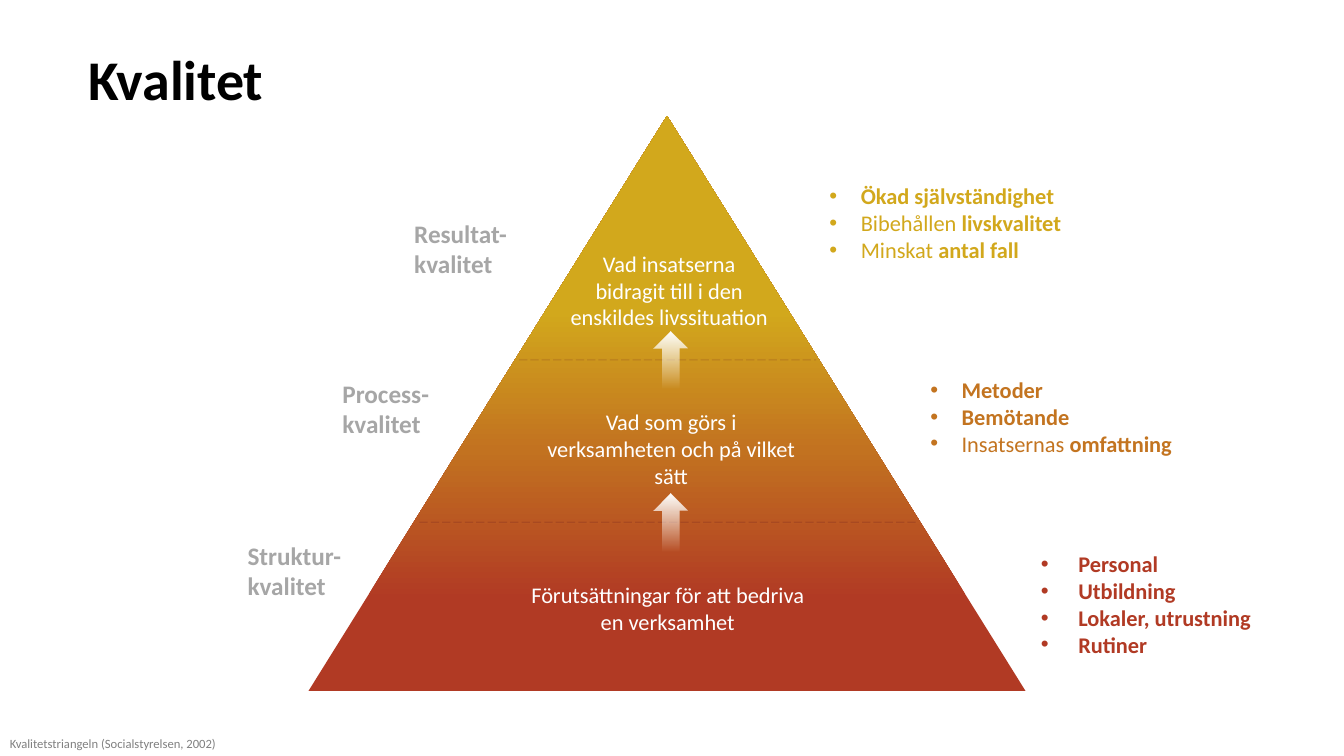
from lxml.etree import SubElement
from pptx import Presentation
from pptx.dml.color import RGBColor
from pptx.enum.dml import MSO_LINE_DASH_STYLE as Dash
from pptx.enum.shapes import MSO_CONNECTOR as Connector, MSO_SHAPE as Shape
from pptx.enum.text import MSO_ANCHOR as Anchor, MSO_AUTO_SIZE as AutoSize, PP_ALIGN as Align
from pptx.oxml.ns import qn
from pptx.util import Cm, Pt

BLACK = RGBColor(0x00, 0x00, 0x00)
WHITE = RGBColor(0xFF, 0xFF, 0xFF)
LABEL_GRAY = RGBColor(0xA6, 0xA6, 0xA6)
SOURCE_GRAY = RGBColor(0x80, 0x80, 0x80)
GOLD = RGBColor(0xD2, 0xA8, 0x1C)
ORANGE = RGBColor(0xC3, 0x74, 0x20)
MIDDLE_ORANGE = RGBColor(0xC2, 0x72, 0x20)
RED = RGBColor(0xB1, 0x3A, 0x24)
DIVIDER = RGBColor(0x60, 0x14, 0x21)

COMPARISON_LAYOUT = 4

# Each level: label, question lines and list, with boxes in cm
LEVELS = [
    dict(label="Resultat- kvalitet", label_box=(10.19, 5.38, 3.23, 1.8),
         lines=["Vad insatserna", "bidragit till i den enskildes livssituation"],
         lines_box=(13.97, 6.17, 5.79, 2.31),
         items=[[("Ökad självständighet", True)],
                [("Bibehållen", False), (" livskvalitet", True)],
                [("Minskat ", False), ("antal fall", True)]],
         items_box=(19.38, 4.47, 11.23, 2.31), color=GOLD, indent=(2.06, 0.79)),
    dict(label="Process- kvalitet", label_box=(8.38, 9.4, 2.9, 1.8),
         lines=["Vad som görs i", "verksamheten och på vilket sätt"],
         lines_box=(13.08, 10.16, 7.67, 2.31),
         items=[[("Metoder", True)], [("Bemötande", True)],
                [("Insatsernas ", False), ("omfattning", True)]],
         items_box=(21.92, 9.35, 10.49, 2.31), color=ORANGE, indent=(2.06, 0.79)),
    dict(label="Struktur- kvalitet", label_box=(5.99, 13.49, 3.15, 1.8),
         lines=["Förutsättningar för att bedriva", "en verksamhet"],
         lines_box=(11.46, 14.53, 10.74, 1.63),
         items=[[("Personal", True)], [("Utbildning", True)],
                [("Lokaler, utrustning", True)], [("Rutiner", True)]],
         items_box=(24.71, 13.74, 9.1, 3), color=RED, indent=(2.21, 0.94)),
]


def add_text(paragraph, text, size=16, color=BLACK, bold=False, font="Calibri"):
    run = paragraph.add_run()
    run.text = text
    run.font.name = font
    run.font.size = Pt(size)
    run.font.bold = bold
    run.font.color.rgb = color


def set_alpha(color_element, percent):
    SubElement(color_element, qn("a:alpha"), val=str(percent * 1000))


class SlideBuilder:
    def __init__(self, slide):
        self.slide = slide

    def place(self, shape, box):
        shape.left, shape.top, shape.width, shape.height = map(Cm, box)

    def title(self, text, box):
        title = self.slide.shapes.title
        self.place(title, box)
        title.text_frame.vertical_anchor = Anchor.TOP
        paragraph = title.text_frame.paragraphs[0]
        paragraph.alignment = Align.LEFT
        paragraph.line_spacing = 0.95
        add_text(paragraph, text, size=40, bold=True)

    def text_box(self, lines, box, align=Align.LEFT, **style):
        frame = self.slide.shapes.add_textbox(*map(Cm, box)).text_frame
        frame.word_wrap = True
        frame.auto_size = AutoSize.SHAPE_TO_FIT_TEXT
        for number, line in enumerate(lines):
            paragraph = frame.add_paragraph() if number else frame.paragraphs[0]
            paragraph.alignment = align
            add_text(paragraph, line, **style)

    def bullet_list(self, placeholder, items, box, color, indent):
        self.place(placeholder, box)
        frame = placeholder.text_frame
        frame.word_wrap = True
        frame.auto_size = AutoSize.SHAPE_TO_FIT_TEXT
        frame.vertical_anchor = Anchor.TOP
        margin, hanging = map(Cm, indent)
        for number, pieces in enumerate(items):
            paragraph = frame.add_paragraph() if number else frame.paragraphs[0]
            paragraph.level = 1
            paragraph.alignment = Align.LEFT
            paragraph.line_spacing = 1.0
            paragraph.space_before = Pt(0)
            properties = paragraph._p.get_or_add_pPr()
            properties.set("marL", str(margin))
            properties.set("indent", str(-hanging))
            SubElement(properties, qn("a:buFont"), typeface="Arial")
            SubElement(properties, qn("a:buChar"), char="•")
            for text, bold in pieces:
                add_text(paragraph, text, color=color, bold=bold)

    def gradient_shape(self, kind, box, stops, angle, rotation=0):
        """Stops are (position, colour, opacity), both numbers in percent."""
        shape = self.slide.shapes.add_shape(kind, *map(Cm, box))
        shape.rotation = rotation
        shape.shadow.inherit = False
        shape.line.fill.background()
        shape.fill.gradient()
        gradient = shape._element.spPr.find(qn("a:gradFill"))
        stop_list = gradient.find(qn("a:gsLst"))
        for old_stop in list(stop_list):
            stop_list.remove(old_stop)
        for position, color, opacity in stops:
            stop = SubElement(stop_list, qn("a:gs"), pos=str(position * 1000))
            color_element = SubElement(stop, qn("a:srgbClr"), val=str(color))
            if opacity < 100:
                set_alpha(color_element, opacity)
        gradient.find(qn("a:lin")).set("ang", str(angle * 60000))

    def divider(self, left, right, y):
        line = self.slide.shapes.add_connector(
            Connector.STRAIGHT, Cm(left), Cm(y), Cm(right), Cm(y))
        line.line.color.rgb = DIVIDER
        line.line.width = Pt(0.75)
        line.line.dash_style = Dash.LONG_DASH
        properties = line._element.spPr
        set_alpha(next(properties.iter(qn("a:srgbClr"))), 20)
        SubElement(properties, qn("a:effectLst"))


def main():
    presentation = Presentation()
    presentation.slide_width, presentation.slide_height = Cm(33.87), Cm(19.05)
    slide = presentation.slides.add_slide(presentation.slide_layouts[COMPARISON_LAYOUT])
    builder = SlideBuilder(slide)
    builder.title("Kvalitet", (1.98, 1.12, 21.56, 2.36))

    # Pyramid with its dividers
    builder.gradient_shape(Shape.ISOSCELES_TRIANGLE, (7.77, 2.92, 18.08, 14.5),
                           [(16, RED, 100), (42, MIDDLE_ORANGE, 100), (66, GOLD, 100)],
                           angle=270)
    builder.divider(10.57, 23.09, 13.16)
    builder.divider(13.08, 20.57, 9.07)

    # Levels: question inside, label to the left, list to the right
    title, *bodies = slide.placeholders
    for level, body in zip(LEVELS, bodies):
        builder.text_box(level["lines"], level["lines_box"], Align.CENTER, color=WHITE)
        builder.text_box([level["label"]], level["label_box"],
                         size=18, color=LABEL_GRAY, bold=True)
        builder.bullet_list(body, level["items"], level["items_box"],
                            level["color"], level["indent"])
    for spare in bodies[len(LEVELS):]:
        spare._element.getparent().remove(spare._element)

    # Arrows between the levels
    for top in (12.73, 8.64):
        builder.gradient_shape(Shape.RIGHT_ARROW, (16.18, top, 1.45, 0.86),
                               [(0, WHITE, 100), (100, WHITE, 0)],
                               angle=180, rotation=270)

    # Source line
    builder.text_box(["Kvalitetstriangeln (Socialstyrelsen, 2002)"],
                     (0, 18.42, 7.54, 0.64), size=9, color=SOURCE_GRAY)
    presentation.save("out.pptx")


if __name__ == "__main__":
    main()
